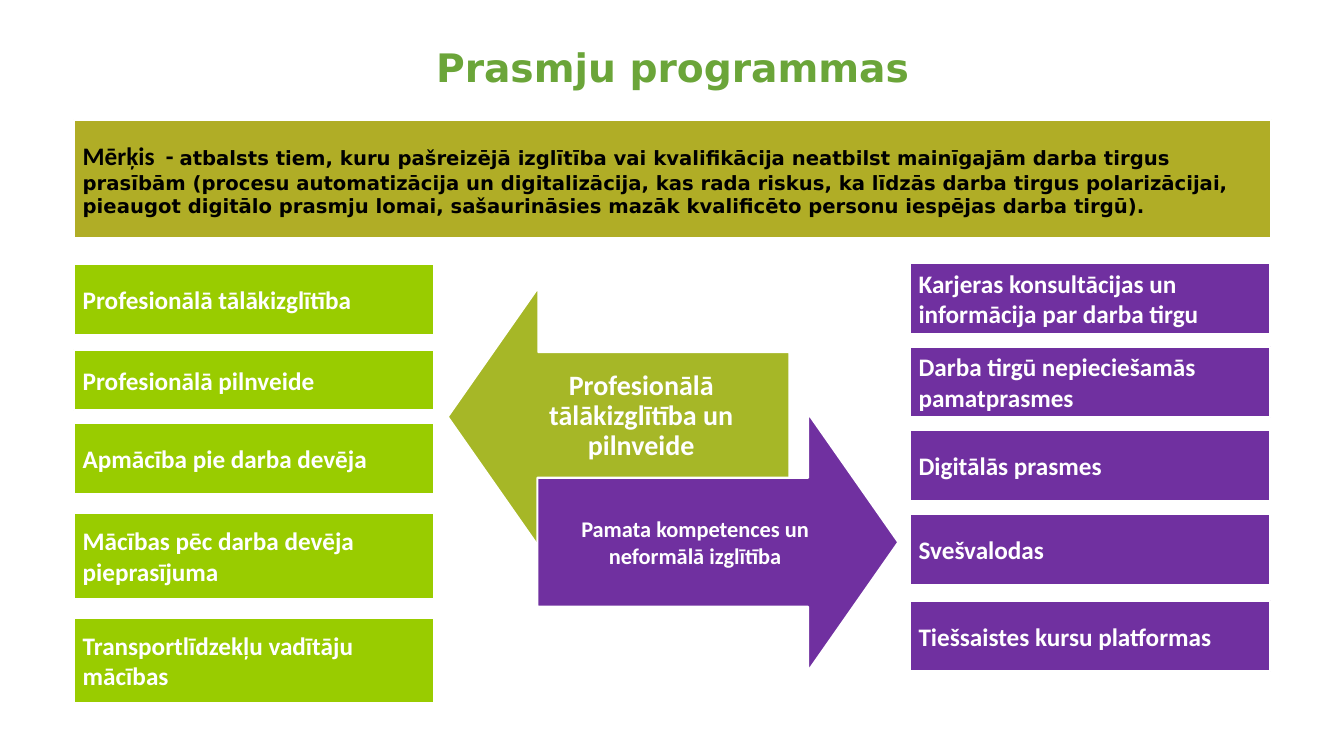
from pptx import Presentation
from pptx.dml.color import RGBColor
from pptx.enum.shapes import MSO_SHAPE
from pptx.enum.text import MSO_ANCHOR, PP_ALIGN
from pptx.util import Emu, Pt

PX = 9144
RECTANGLE, UP_ARROW = MSO_SHAPE.RECTANGLE, MSO_SHAPE.UP_ARROW
LEFT, CENTER = PP_ALIGN.LEFT, PP_ALIGN.CENTER
TOP, MIDDLE = MSO_ANCHOR.TOP, MSO_ANCHOR.MIDDLE
WHITE, BLACK, OLIVE = "FFFFFF", "000000", "B0AD26"
TITLE_GREEN, LIME, MOSS, PURPLE = "6BA539", "99CC00", "A6B727", "7030A0"
BODY_FONT, WIDE_FONT = "Calibri", "DejaVu Sans"


def add_block(kind, area, fill):
    block = page.shapes.add_shape(kind, *[Emu(length * PX) for length in area])
    block.shadow.inherit = False
    block.fill.solid()
    block.fill.fore_color.rgb = RGBColor.from_string(fill)
    block.line.color.rgb = RGBColor.from_string(WHITE)
    block.line.width = Pt(1.5)
    return block


def write(box, spans, color, align, anchor, margins):
    frame = box.text_frame
    frame.word_wrap = True
    frame.vertical_anchor = anchor
    frame.margin_left = frame.margin_right = Emu(margins[0] * PX)
    frame.margin_top = frame.margin_bottom = Emu(margins[1] * PX)
    para = frame.paragraphs[0]
    para.alignment = align
    for text, font, size in spans:
        span = para.add_run()
        span.text = text
        span.font.name = font
        span.font.size = Pt(size)
        span.font.bold = True
        span.font.color.rgb = RGBColor.from_string(color)
    return para


deck = Presentation()
deck.slide_width, deck.slide_height = Emu(1333 * PX), Emu(750 * PX)
page = deck.slides.add_slide(deck.slide_layouts[6])

title = page.shapes.add_textbox(*[Emu(length * PX) for length in (210, 38, 914, 67)])
write(title, [("Prasmju programmas", WIDE_FONT, 28)], TITLE_GREEN, CENTER, TOP, (10, 5))

goal = add_block(RECTANGLE, (73, 119, 1188, 117), OLIVE)
goal_spans = [
    ("Mērķis  - ", BODY_FONT, 18),
    ("atbalsts tiem, kuru pašreizējā izglītība vai kvalifikācija neatbilst mainīgajām "
     "darba tirgus prasībām (procesu automatizācija un digitalizācija, kas rada riskus, "
     "ka līdzās darba tirgus polarizācijai, pieaugot digitālo prasmju lomai, "
     "sašaurināsies mazāk kvalificēto personu iespējas darba tirgū).", WIDE_FONT, 14),
]
write(goal, goal_spans, BLACK, LEFT, MIDDLE, (9, 9))

arrows = [
    ((485, 244, 257, 339), 270, MOSS, (489, 349, 294, 128),
     "Profesionālā tālākizglītība un pilnveide", 20, 16, 0.9),
    ((584, 359, 256, 358), 90, PURPLE, (533, 474, 313, 128),
     "Pamata kompetences un neformālā izglītība", 16, 12, 1.0),
]
for area, rotation, fill, label_area, text, size, margin, spacing in arrows:
    arrow = add_block(UP_ARROW, area, fill)
    arrow.rotation = rotation
    arrow.adjustments[0] = 0.5
    arrow.adjustments[1] = 0.35
    label = page.shapes.add_textbox(*[Emu(length * PX) for length in label_area])
    para = write(label, [(text, BODY_FONT, size)], WHITE, CENTER, MIDDLE, (margin, margin))
    para.line_spacing = spacing

columns = [
    (73, LIME, [
        (262, 70, "Profesionālā tālākizglītība"),
        (347, 60, "Profesionālā pilnveide"),
        (420, 70, "Apmācība pie darba devēja"),
        (509, 85, "Mācības pēc darba devēja pieprasījuma"),
        (613, 85, "Transportlīdzekļu vadītāju mācības"),
    ]),
    (902, PURPLE, [
        (261, 70, "Karjeras konsultācijas un informācija par darba tirgu"),
        (344, 70, "Darba tirgū nepieciešamās pamatprasmes"),
        (427, 70, "Digitālās prasmes"),
        (510, 70, "Svešvalodas"),
        (596, 70, "Tiešsaistes kursu platformas"),
    ]),
]
for left, fill, items in columns:
    for top, height, text in items:
        card = add_block(RECTANGLE, (left, top, 358, height), fill)
        write(card, [(text, BODY_FONT, 18)], WHITE, LEFT, MIDDLE, (9, 9))

deck.save("out.pptx")
